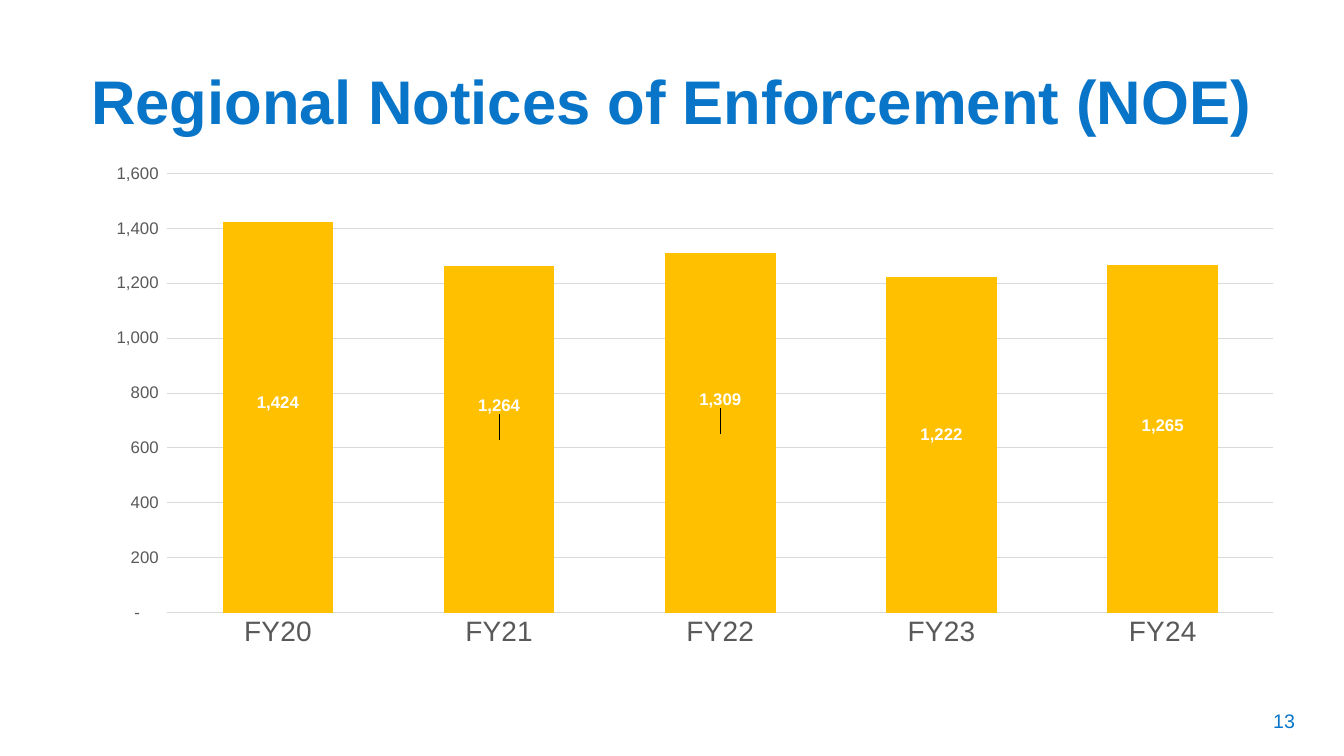
import pptx
import pptx.chart.data
import pptx.dml.color
import pptx.enum.chart
import pptx.enum.text
import pptx.oxml
import pptx.oxml.ns
import pptx.util

TITLE = "Regional Notices of Enforcement (NOE)"
PAGE_NUMBER = "13"
NOTICES = {"FY20": 1424, "FY21": 1264, "FY22": 1309, "FY23": 1222, "FY24": 1265}
LABEL_RISES = [0.14, 0.33, 0.33, 0.1, 0.13]
NUMBER_FORMAT = '_(* #,##0_);_(* \\(#,##0\\);_(* "-"??_);_('

FONT = "Arial"
BLUE, GOLD, WHITE, GREY, LIGHT_GREY = "0875C8", "FFC000", "FFFFFF", "595959", "D9D9D9"

SLIDE_WIDTH, SLIDE_HEIGHT = 13.33, 7.5
TITLE_AREA = (5.18, 8.8, 89.65, 10.13)
PAGE_AREA = (92.2, 92.67, 6.68, 5.33)
CHART_AREA = (6.53, 20.4, 90.02, 66.67)
CHART_WIDTH, CHART_HEIGHT = 12, 5
PLOT_LEFT, PLOT_TOP, PLOT_WIDTH, PLOT_HEIGHT = 0.79, 0.19, 10.97, 4.36


def color(value):
    return pptx.dml.color.RGBColor.from_string(value)


def place(area):
    sizes = (SLIDE_WIDTH, SLIDE_HEIGHT) * 2
    return [pptx.util.Inches(share * size / 100) for share, size in zip(area, sizes)]


def set_font(font, size, tone, bold=False):
    font.name = FONT
    font.size = pptx.util.Pt(size)
    font.bold = bold
    font.color.rgb = color(tone)


def set_line(line, tone):
    line.color.rgb = color(tone)
    line.width = pptx.util.Pt(0.75)


def add_text(slide, text, area, size, tone, bold=False, line_spacing=1.0):
    frame = slide.shapes.add_textbox(*place(area)).text_frame
    frame.word_wrap = True
    frame.vertical_anchor = pptx.enum.text.MSO_ANCHOR.MIDDLE
    paragraph = frame.paragraphs[0]
    paragraph.alignment = pptx.enum.text.PP_ALIGN.CENTER
    paragraph.line_spacing = line_spacing
    run = paragraph.add_run()
    run.text = text
    set_font(run.font, size, tone, bold)


def make_layout(entries):
    body = "".join(f'<c:{name} val="{value}"/>' for name, value in entries)
    namespace = pptx.oxml.ns.nsdecls("c")
    return pptx.oxml.parse_xml(
        f"<c:layout {namespace}><c:manualLayout>{body}</c:manualLayout></c:layout>"
    )


def set_plot_layout(chart):
    plot_area = chart.plots[0]._element.getparent()
    for layout in plot_area.findall(pptx.oxml.ns.qn("c:layout")):
        plot_area.remove(layout)
    plot_area.insert(0, make_layout([
        ("layoutTarget", "inner"), ("xMode", "edge"), ("yMode", "edge"),
        ("x", PLOT_LEFT / CHART_WIDTH), ("y", PLOT_TOP / CHART_HEIGHT),
        ("w", PLOT_WIDTH / CHART_WIDTH), ("h", PLOT_HEIGHT / CHART_HEIGHT),
    ]))


def style_axes(chart):
    none = pptx.enum.chart.XL_TICK_MARK.NONE
    for axis, size in ((chart.category_axis, 20), (chart.value_axis, 12)):
        axis.major_tick_mark = none
        axis.minor_tick_mark = none
        set_font(axis.tick_labels.font, size, GREY)
    set_line(chart.category_axis.format.line, LIGHT_GREY)
    value_axis = chart.value_axis
    value_axis.minimum_scale = 0
    value_axis.maximum_scale = 1600
    value_axis.major_unit = 200
    value_axis.format.line.fill.background()
    value_axis.has_major_gridlines = True
    set_line(value_axis.major_gridlines.format.line, LIGHT_GREY)
    value_axis.tick_labels.number_format = NUMBER_FORMAT
    value_axis.tick_labels.number_format_is_linked = False


def style_labels(series):
    center = pptx.enum.chart.XL_LABEL_POSITION.CENTER
    labels = series.data_labels
    labels.show_value = True
    labels.position = center
    labels.number_format = NUMBER_FORMAT
    labels.number_format_is_linked = False
    set_font(labels.font, 12, WHITE, bold=True)
    for index, rise in enumerate(LABEL_RISES):
        label = series.points[index].data_label
        set_font(label.font, 12, WHITE, bold=True)
        label.position = center
    for element, rise in zip(labels._element.findall(pptx.oxml.ns.qn("c:dLbl")), LABEL_RISES):
        element.insert(1, make_layout([("x", 0), ("y", -rise / CHART_HEIGHT)]))


def add_notices_chart(slide):
    data = pptx.chart.data.CategoryChartData(number_format=NUMBER_FORMAT)
    data.categories = list(NOTICES)
    data.add_series("Series 1", list(NOTICES.values()))
    kind = pptx.enum.chart.XL_CHART_TYPE.COLUMN_CLUSTERED
    chart = slide.shapes.add_chart(kind, *place(CHART_AREA), data).chart
    set_font(chart.font, 10, "000000")
    chart.has_title = False
    chart.has_legend = False
    plot = chart.plots[0]
    plot.vary_by_categories = False
    plot.gap_width = 100
    plot.overlap = -27
    series = plot.series[0]
    series.format.fill.solid()
    series.format.fill.fore_color.rgb = color(GOLD)
    style_axes(chart)
    style_labels(series)
    set_plot_layout(chart)


def main():
    presentation = pptx.Presentation()
    presentation.slide_width = pptx.util.Inches(SLIDE_WIDTH)
    presentation.slide_height = pptx.util.Inches(SLIDE_HEIGHT)
    slide = presentation.slides.add_slide(presentation.slide_layouts[6])
    add_text(slide, PAGE_NUMBER, PAGE_AREA, size=14, tone=BLUE)
    add_text(slide, TITLE, TITLE_AREA, size=44, tone=BLUE, bold=True, line_spacing=0.9)
    add_notices_chart(slide)
    presentation.save("out.pptx")


if __name__ == "__main__":
    main()
